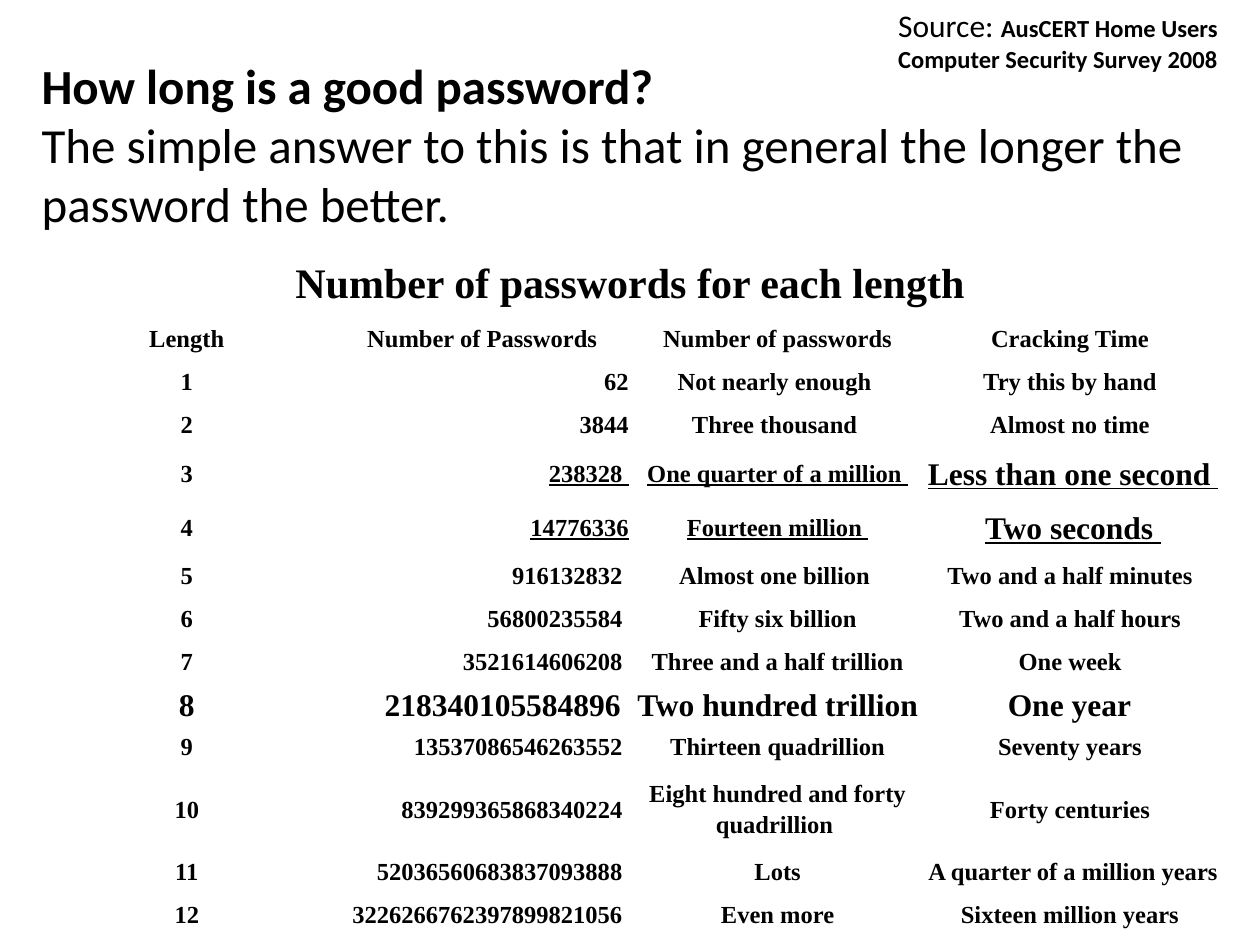
import pptx
import pptx.util
import pptx.dml.color
import pptx.enum.text

Inches = pptx.util.Inches
ALIGN = pptx.enum.text.PP_ALIGN
ANCHOR = pptx.enum.text.MSO_ANCHOR
BLACK = pptx.dml.color.RGBColor(0x00, 0x00, 0x00)
SANS, SERIF = "Calibri", "Times New Roman"

QUESTION = "How long is a good password?"
ANSWER = "The simple answer to this is that in general the longer the password the better."
SOURCE_LABEL = "Source: "
SOURCE = "AusCERT Home Users Computer Security Survey 2008"
TABLE_TITLE = "Number of passwords for each length"
HEADINGS = ("Length", "Number of Passwords", "Number of passwords", "Cracking Time ")
PASSWORDS = [
    ("1", "62", "Not nearly enough ", "Try this by hand "),
    ("2", "3844", "Three thousand ", "Almost no time "),
    ("3", "238328 ", "One quarter of a million ", "Less than one second "),
    ("4", "14776336", "Fourteen million ", "Two seconds "),
    ("5", "916132832 ", "Almost one billion ", "Two and a half minutes "),
    ("6", "56800235584 ", "Fifty six billion", "Two and a half hours "),
    ("7", "3521614606208 ", "Three and a half trillion", "One week "),
    ("8", "218340105584896 ", "Two hundred trillion", "One year "),
    ("9", "13537086546263552 ", "Thirteen quadrillion", "Seventy years "),
    ("10", "839299365868340224 ", "Eight hundred and forty quadrillion ", "Forty centuries "),
    ("11", "52036560683837093888 ", "Lots", "A quarter of a million years "),
    ("12", "3226266762397899821056 ", "Even more", "Sixteen million years "),
]
UNDERLINED = ("3", "4")
LARGE = "8"
ROW_HEIGHT = 0.34
TALL_ROWS = {0: 0.56, 4: 0.43, 5: 0.43, 11: 0.65}
LEFT, WIDTH = 0.31, 9.38


def add_text(p, text, size=14, font=SERIF, bold=True, underline=None, align=None, spacing=None):
    r = p.add_run()
    r.text = text
    r.font.size = pptx.util.Pt(size)
    r.font.name = font
    r.font.bold = bold
    r.font.underline = underline
    r.font.color.rgb = BLACK
    if align is not None:
        p.alignment = align
    if spacing:
        p.line_spacing = spacing


def fill_cell(cell, text, **style):
    cell.fill.background()
    cell.vertical_anchor = ANCHOR.MIDDLE
    cell.margin_left = cell.margin_right = Inches(0.01)
    cell.margin_top = cell.margin_bottom = Inches(0.01)
    style.setdefault("align", ALIGN.CENTER)
    add_text(cell.text_frame.paragraphs[0], text, spacing=1.15, **style)


def add_title(s):
    title = s.shapes.title
    title.left, title.top = Inches(0.23), Inches(0.39)
    title.width, title.height = Inches(WIDTH), Inches(2.22)
    tf = title.text_frame
    tf.word_wrap = True
    tf.auto_size = pptx.enum.text.MSO_AUTO_SIZE.NONE
    tf.vertical_anchor = ANCHOR.TOP
    add_text(tf.paragraphs[0], QUESTION, size=28, font=SANS, align=ALIGN.LEFT)
    add_text(tf.add_paragraph(), ANSWER, size=28, font=SANS, bold=False, align=ALIGN.LEFT)


def add_password_table(s):
    rows = [HEADINGS] + PASSWORDS
    heights = [TALL_ROWS.get(i, ROW_HEIGHT) for i in range(len(rows) + 1)]
    frame = s.shapes.add_table(len(heights), len(HEADINGS), Inches(LEFT), Inches(1.95),
                               Inches(WIDTH), Inches(sum(heights)))
    table = frame.table
    table.first_row = table.horz_banding = False
    for row, height in zip(table.rows, heights):
        row.height = Inches(height)
    table.cell(0, 0).merge(table.cell(0, len(HEADINGS) - 1))
    fill_cell(table.cell(0, 0), TABLE_TITLE, size=24)
    for i, row in enumerate(rows, start=1):
        for j, text in enumerate(row):
            underline = row[0] in UNDERLINED and j > 0
            large = row[0] == LARGE or (underline and j == 3)
            fill_cell(table.cell(i, j), text, size=18 if large else 14, underline=underline,
                      align=ALIGN.RIGHT if j == 1 and i > 1 else ALIGN.CENTER)


def add_source(s):
    tf = s.shapes.add_textbox(Inches(7.03), 0, Inches(2.97), Inches(0.64)).text_frame
    tf.word_wrap = True
    p = tf.paragraphs[0]
    add_text(p, SOURCE_LABEL, size=18, font=SANS, bold=False)
    add_text(p, SOURCE, font=SANS)


def main():
    prs = pptx.Presentation()
    prs.slide_width, prs.slide_height = Inches(10), Inches(7.5)
    s = prs.slides.add_slide(prs.slide_layouts[5])
    add_title(s)
    add_password_table(s)
    add_source(s)
    prs.save("out.pptx")


if __name__ == "__main__":
    main()
